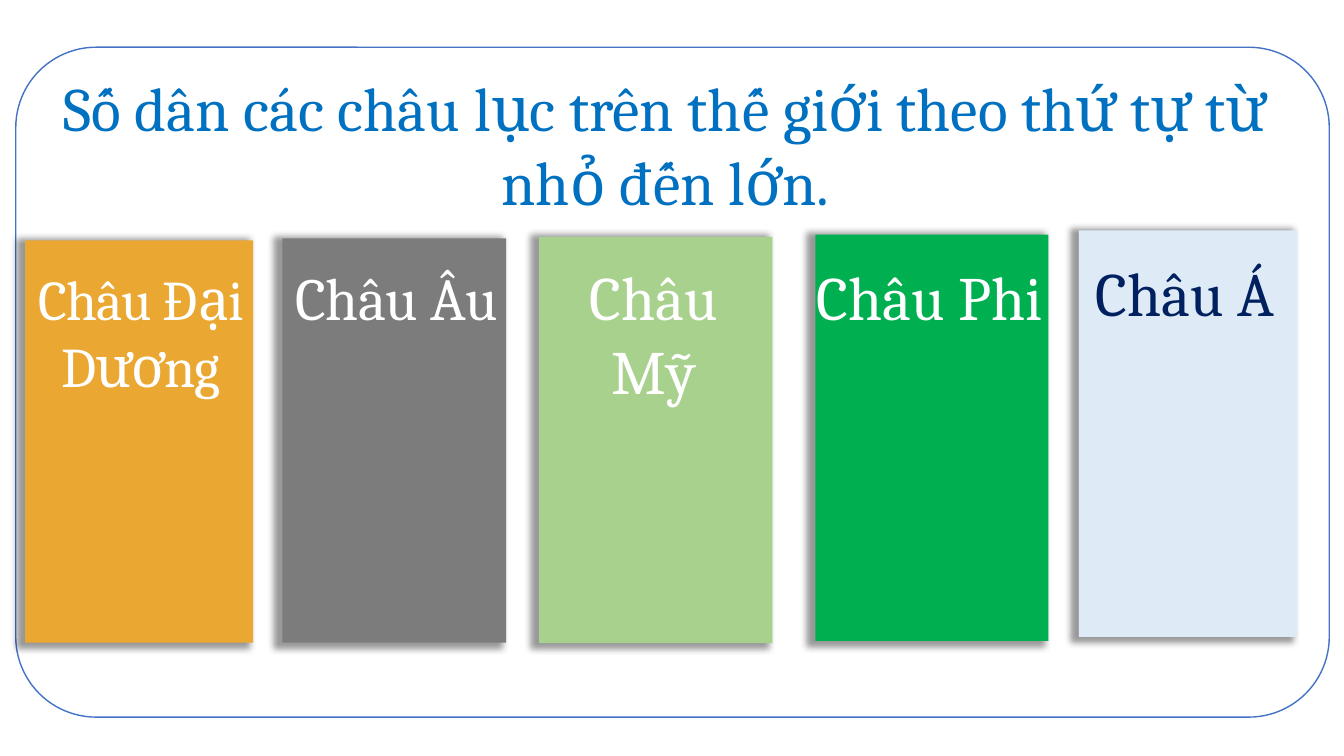
from lxml import etree
from pptx import Presentation
from pptx.dml.color import RGBColor
from pptx.enum.shapes import MSO_SHAPE
from pptx.enum.text import MSO_ANCHOR, MSO_AUTO_SIZE, PP_ALIGN
from pptx.util import Pt

PX = 9525
ROUND, SNIP = MSO_SHAPE.ROUNDED_RECTANGLE, MSO_SHAPE.SNIP_1_RECTANGLE
TOP, CENTER, GROW = MSO_ANCHOR.TOP, PP_ALIGN.CENTER, MSO_AUTO_SIZE.SHAPE_TO_FIT_TEXT

WHITE = RGBColor(0xFF, 0xFF, 0xFF)
NAVY = RGBColor(0x00, 0x20, 0x60)
BLUE = RGBColor(0x00, 0x70, 0xC0)
EDGE = RGBColor(0x44, 0x72, 0xC4)
GOLD = RGBColor(0xEA, 0xA8, 0x33)
GRAY = RGBColor(0x7C, 0x7C, 0x7C)
LIME = RGBColor(0xA9, 0xD1, 0x8E)
GREEN = RGBColor(0x00, 0xB0, 0x50)
PALE = RGBColor(0xDE, 0xEB, 0xF7)

SHADOW = (
    '<a:effectLst xmlns:a="http://schemas.openxmlformats.org/drawingml/2006/main">'
    '<a:outerShdw blurRad="63500" sx="102000" sy="102000" algn="ctr" rotWithShape="0">'
    '<a:prstClr val="black"><a:alpha val="40000"/></a:prstClr>'
    '</a:outerShdw></a:effectLst>'
)


def px(*sizes):
    return [size * PX for size in sizes]


def write(shape, text, size=44, color=WHITE, space=0):
    frame = shape.text_frame
    frame.margin_left = frame.margin_right = 0
    frame.margin_top = frame.margin_bottom = 0
    frame.word_wrap = True
    frame.auto_size = GROW
    frame.vertical_anchor = TOP
    line = frame.paragraphs[0]
    line.alignment = CENTER
    line.line_spacing = 1.0
    run = line.add_run()
    run.text = text
    run.font.name = "Cambria"
    run.font.size = Pt(size)
    run.font.color.rgb = color
    if space:
        run.font._element.set("spc", str(space))


deck = Presentation()
deck.slide_width, deck.slide_height = px(1280, 720)
slide = deck.slides.add_slide(deck.slide_layouts[5])
shapes = slide.shapes

panel = shapes.add_shape(ROUND, *px(15, 45, 1251, 638))
panel.adjustments[0] = 0.12
panel.fill.solid()
panel.fill.fore_color.rgb = WHITE
panel.line.color.rgb = EDGE
panel.line.width = Pt(1)
panel.shadow.inherit = False

# The title sits in front of the panel
title = shapes.title
title.element.getparent().append(title.element)
title.left, title.top, title.width, title.height = px(31, 67, 1206, 142)
write(title, "Số dân các châu lục trên thế giới theo thứ tự từ nhỏ đến lớn.", color=BLUE)

# Name, card box, card fill, label box, text format
cards = [
    ("Châu Đại Dương", (24, 229, 217, 383), GOLD, (30, 252, 208, 130),
     {"size": 40, "space": -80}),
    ("Châu Âu", (269, 227, 213, 385), GRAY, (274, 248, 207, 69),
     {"size": 42.6, "space": -30}),
    ("Châu Mỹ", (513, 226, 222, 387), LIME, (518, 247, 210, 71), {}),
    ("Châu Phi", (776, 224, 222, 387), GREEN, (773, 247, 224, 71), {}),
    ("Châu Á", (1027, 220, 208, 387), PALE, (1024, 243, 210, 71), {"color": NAVY}),
]
for name, (left, top, wide, high), fill, box, style in cards:
    group = shapes.add_group_shape()
    # A quarter turn swaps the sides about the card's centre
    shift = (high - wide) // 2
    card = group.shapes.add_shape(SNIP, *px(left - shift, top + shift, high, wide))
    card.rotation = 90
    card.adjustments[0] = 0
    card.fill.solid()
    card.fill.fore_color.rgb = fill
    card.line.fill.background()
    card.element.spPr.append(etree.fromstring(SHADOW))
    write(group.shapes.add_textbox(*px(*box)), name, **style)

deck.save("out.pptx")
